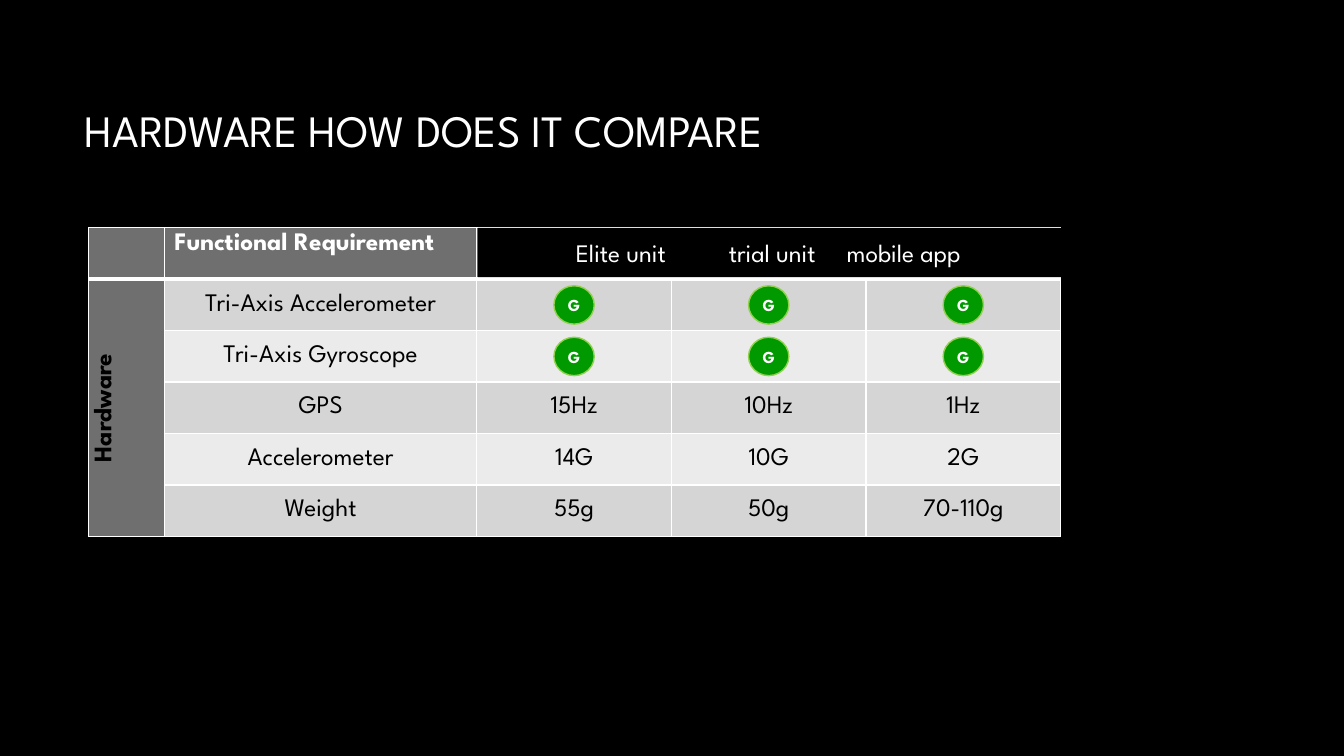
from lxml import etree
from pptx import Presentation
from pptx.dml.color import RGBColor
from pptx.enum.shapes import MSO_SHAPE
from pptx.enum.text import MSO_ANCHOR, PP_ALIGN
from pptx.oxml.ns import qn
from pptx.util import Pt

LEFT, CENTER = PP_ALIGN.LEFT, PP_ALIGN.CENTER
TOP, MIDDLE = MSO_ANCHOR.TOP, MSO_ANCHOR.MIDDLE
RECTANGLE, OVAL = MSO_SHAPE.RECTANGLE, MSO_SHAPE.OVAL

THEME = {
    "font": "League Spartan",
    "black": "000000", "white": "FFFFFF", "heading": "6F6F6F",
    "bands": ("D5D5D5", "EBEBEB"),
    "badge": "009900", "badge line": "92D050",
    "title size": 32, "table size": 18, "badge size": 12,
}


def write(box, text, size, color, bold=False, align=CENTER):
    para = box.text_frame.paragraphs[0]
    para.alignment = align
    span = para.add_run()
    span.text = text
    formats = {"name": THEME["font"], "size": Pt(THEME[size]), "bold": bold}
    for name, value in formats.items():
        setattr(span.font, name, value)
    span.font.color.rgb = RGBColor.from_string(THEME[color])
    return para


def add_filled(kind, left, top, width, height, color):
    shape = page.shapes.add_shape(kind, Pt(left), Pt(top), Pt(width), Pt(height))
    shape.shadow.inherit = False
    shape.fill.solid()
    shape.fill.fore_color.rgb = RGBColor.from_string(THEME[color])
    shape.text_frame.vertical_anchor = MIDDLE
    return shape


deck = Presentation()
deck.slide_width, deck.slide_height = Pt(960), Pt(540)
page = deck.slides.add_slide(deck.slide_layouts[5])
page.background.fill.solid()
page.background.fill.fore_color.rgb = RGBColor.from_string(THEME["black"])

# Title
title = page.shapes.title
title_place = {"left": 53.3, "top": 41, "width": 676.8, "height": 103.7}
for name, value in title_place.items():
    setattr(title, name, Pt(value))
title.text_frame.vertical_anchor = MIDDLE
write(title, "HARDWARE HOW DOES IT COMPARE", "title size", "white", align=LEFT)

# Comparison table
ROWS = [
    ("", "Functional Requirement", "", "", ""),
    ("Hardware", "Tri-Axis Accelerometer", "", "", ""),
    ("", "Tri-Axis Gyroscope", "", "", ""),
    ("", "GPS", "15Hz", "10Hz", "1Hz"),
    ("", "Accelerometer", "14G", "10G", "2G"),
    ("", "Weight", "55g", "50g", "70-110g"),
]
WIDTHS = [54, 223.2, 139, 139, 139]
TABLE_LEFT, TABLE_TOP, ROW_HEIGHT = 63.4, 162.7, 36.75
table = page.shapes.add_table(
    len(ROWS), len(WIDTHS), Pt(TABLE_LEFT), Pt(TABLE_TOP),
    Pt(sum(WIDTHS)), Pt(ROW_HEIGHT * len(ROWS))).table
table.first_row = table.horz_banding = False
for column, width in zip(table.columns, WIDTHS):
    column.width = Pt(width)

for row, texts in enumerate(ROWS):
    table.rows[row].height = Pt(ROW_HEIGHT)
    for col, text in enumerate(texts):
        cell = table.cell(row, col)
        properties = cell._tc.get_or_add_tcPr()
        weights = {"lnL": 1, "lnR": 1, "lnT": 3 if row == 1 else 1,
                   "lnB": 3 if row == 0 else 1}
        for side, weight in weights.items():
            border = etree.SubElement(properties, qn(f"a:{side}"), w=str(Pt(weight)))
            paint = etree.SubElement(border, qn("a:solidFill"))
            etree.SubElement(paint, qn("a:srgbClr"), val=THEME["white"])
        is_heading = row == 0 or col == 0
        fill = THEME["heading"] if is_heading else THEME["bands"][(row - 1) % 2]
        cell.fill.solid()
        cell.fill.fore_color.rgb = RGBColor.from_string(fill)
        cell.vertical_anchor = MIDDLE if row else TOP
        if text:
            write(cell, text, "table size", "black" if row else "white",
                  bold=is_heading, align=CENTER if row else LEFT)

group = table.cell(1, 0)
group.merge(table.cell(len(ROWS) - 1, 0))
group._tc.get_or_add_tcPr().set("vert", "vert270")

# Product names over the table header
products = add_filled(RECTANGLE, 341.3, TABLE_TOP, 416.9, 35.3, "black")
products.line.fill.background()
products.text_frame.margin_left = Pt(70)
products.text_frame.word_wrap = True
para = write(products, "Elite unit\ttrial unit\tmobile app", "table size", "white", align=LEFT)
tabs = etree.SubElement(para._p.get_or_add_pPr(), qn("a:tabLst"))
for stop in (109.3, 193.5):
    etree.SubElement(tabs, qn("a:tab"), pos=str(Pt(stop)), algn="l")

# Green badges, centred in the first two rows
BADGE_WIDTH, BADGE_HEIGHT = 28.8, 27.4
for row in (1, 2):
    for col in (2, 3, 4):
        left = TABLE_LEFT + sum(WIDTHS[:col]) + (WIDTHS[col] - BADGE_WIDTH) / 2
        top = TABLE_TOP + ROW_HEIGHT * (row + 0.5) - BADGE_HEIGHT / 2
        badge = add_filled(OVAL, left, top, BADGE_WIDTH, BADGE_HEIGHT, "badge")
        badge.line.color.rgb = RGBColor.from_string(THEME["badge line"])
        badge.line.width = Pt(1)
        for side in ("left", "right", "top", "bottom"):
            setattr(badge.text_frame, f"margin_{side}", Pt(5))
        write(badge, "G", "badge size", "white", bold=True)

deck.save("out.pptx")
